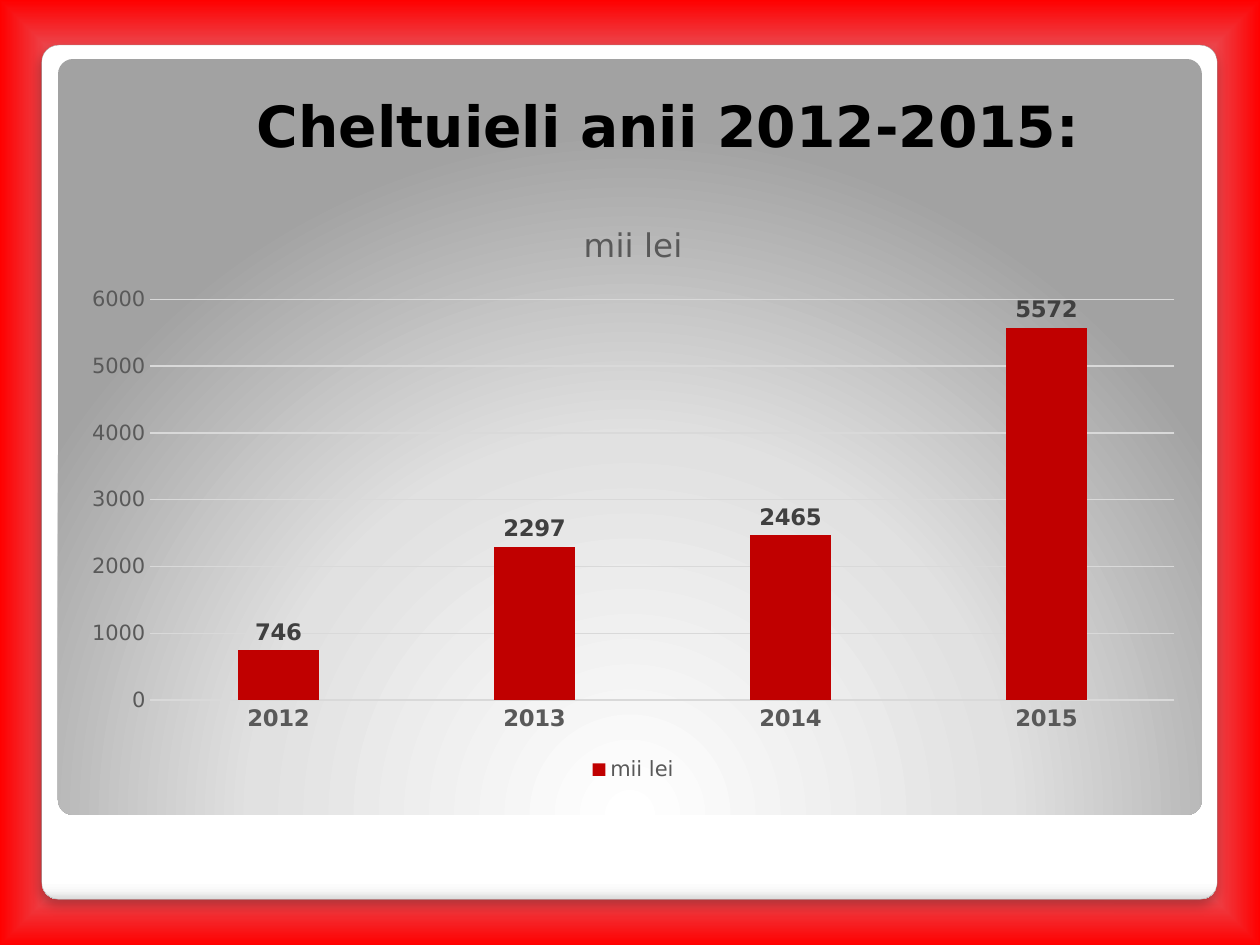
from lxml import etree
from pptx import Presentation
from pptx.chart.data import CategoryChartData
from pptx.dml.color import RGBColor
from pptx.enum.chart import XL_CHART_TYPE as ChartType
from pptx.enum.chart import XL_LABEL_POSITION as LabelPosition
from pptx.enum.chart import XL_LEGEND_POSITION as LegendPosition
from pptx.enum.chart import XL_TICK_MARK as TickMark
from pptx.enum.shapes import MSO_SHAPE as Shape
from pptx.enum.text import MSO_ANCHOR as Anchor
from pptx.enum.text import MSO_AUTO_SIZE as AutoSize
from pptx.enum.text import PP_ALIGN as Align
from pptx.oxml import parse_xml
from pptx.oxml.ns import nsdecls, qn
from pptx.util import Cm, Pt

FONT = "DejaVu Sans"
DARK_GREY = "595959"
LIGHT_GREY = "D9D9D9"
RED = "C00000"


def rgb(value):
    return RGBColor.from_string(value)


def set_font(font, size, color, bold=False):
    font.name = FONT
    font.size = Pt(size)
    font.bold = bold
    font.color.rgb = rgb(color)


def set_line(line, color, width):
    line.color.rgb = rgb(color)
    line.width = Pt(width)


def set_gradient(parent, stops, direction):
    """Replace the solid fill inside parent; direction is a:lin or a:path XML."""
    stop_xml = "".join(
        f'<a:gs pos="{percent * 1000}"><a:srgbClr val="{color}"/></a:gs>'
        for percent, color in stops
    )
    gradient = parse_xml(
        f'<a:gradFill {nsdecls("a")} rotWithShape="1">'
        f"<a:gsLst>{stop_xml}</a:gsLst>{direction}</a:gradFill>"
    )
    parent.replace(parent.find(qn("a:solidFill")), gradient)


def path_direction(kind, top, bottom):
    return (
        f'<a:path path="{kind}"><a:fillToRect l="50000" t="{top * 1000}" '
        f'r="50000" b="{bottom * 1000}"/></a:path>'
    )


def add_background(slide):
    slide.background.fill.solid()
    properties = slide.element.find(".//" + qn("p:bgPr"))
    stops = [(40, "85C2FF"), (70, "C4D6EB"), (100, "FF0000")]
    set_gradient(properties, stops, path_direction("shape", 50, 50))


def add_panel(slide, left, top, width, height, stops, direction):
    panel = slide.shapes.add_shape(
        Shape.ROUNDED_RECTANGLE, Cm(left), Cm(top), Cm(width), Cm(height)
    )
    panel.adjustments[0] = 0.02
    panel.shadow.inherit = False
    panel.line.fill.background()
    panel.fill.solid()
    set_gradient(panel.element.spPr, stops, direction)
    return panel


def add_soft_shadow(shape):
    effects = shape.element.spPr.find(qn("a:effectLst"))
    shadow = etree.SubElement(
        effects, qn("a:outerShdw"), blurRad=str(Pt(6)), dist=str(Pt(4)), dir="5400000"
    )
    color = etree.SubElement(shadow, qn("a:srgbClr"), val="000000")
    etree.SubElement(color, qn("a:alpha"), val="25000")


def add_panels(slide):
    white_stops = [(0, "FFFFFF"), (98, "FFFFFF"), (99, "F7F7F7"), (100, "DADADA")]
    frame = add_panel(
        slide, 0.84, 0.91, 23.7, 17.22, white_stops, '<a:lin ang="5400000" scaled="0"/>'
    )
    set_line(frame.line, "A4A4A4", 0.16)
    add_soft_shadow(frame)
    grey_stops = [(0, "FFFFFF"), (55, "E1E1E1"), (100, "A2A2A2")]
    add_panel(
        slide, 1.17, 1.19, 23.06, 15.24, grey_stops, path_direction("circle", 175, -75)
    )


def place_title(slide, text):
    title = slide.shapes.title
    title.left, title.top, title.width, title.height = Cm(2.11), Cm(1.7), Cm(22.73), Cm(2.92)
    slide.shapes[-1].element.addnext(title.element)  # in front of the panels
    frame = title.text_frame
    frame.auto_size = AutoSize.NONE
    frame.word_wrap = True
    frame.vertical_anchor = Anchor.TOP
    para = frame.paragraphs[0]
    para.alignment = Align.CENTER
    span = para.add_run()
    span.text = text
    set_font(span.font, 32.4, "000000", bold=True)


def style_axes(chart):
    category_axis, value_axis = chart.category_axis, chart.value_axis
    for axis in (category_axis, value_axis):
        axis.major_tick_mark = axis.minor_tick_mark = TickMark.NONE
    set_font(category_axis.tick_labels.font, 13, DARK_GREY, bold=True)
    set_line(category_axis.format.line, LIGHT_GREY, 0.75)
    set_font(value_axis.tick_labels.font, 12, DARK_GREY)
    value_axis.format.line.fill.background()
    value_axis.has_major_gridlines = True
    set_line(value_axis.major_gridlines.format.line, LIGHT_GREY, 0.75)


def style_columns(plot):
    plot.gap_width = 219
    plot.overlap = -27
    plot.vary_by_categories = False
    series = plot.series[0]
    series.format.fill.solid()
    series.format.fill.fore_color.rgb = rgb(RED)
    labels = series.data_labels
    labels.show_value = True
    labels.position = LabelPosition.OUTSIDE_END
    set_font(labels.font, 13, "404040", bold=True)


def add_expense_chart(slide, unit, expenses):
    data = CategoryChartData()
    data.categories = list(expenses)
    data.add_series(unit, list(expenses.values()))
    chart = slide.shapes.add_chart(
        ChartType.COLUMN_CLUSTERED, Cm(1.4), Cm(4.01), Cm(22.73), Cm(11.86), data
    ).chart
    set_font(chart.font, 10, "000000")
    chart.has_title = True
    span = chart.chart_title.text_frame.paragraphs[0].add_run()
    span.text = unit
    set_font(span.font, 18.6, DARK_GREY)
    chart.has_legend = True
    chart.legend.position = LegendPosition.BOTTOM
    chart.legend.include_in_layout = False
    set_font(chart.legend.font, 12, DARK_GREY)
    style_axes(chart)
    style_columns(chart.plots[0])


def main():
    deck = Presentation()
    deck.slide_width, deck.slide_height = Cm(25.4), Cm(19.05)
    slide = deck.slides.add_slide(deck.slide_layouts.get_by_name("Title Only"))
    add_background(slide)
    add_panels(slide)
    place_title(slide, "Cheltuieli anii 2012-2015:")
    expenses = {"2012": 746, "2013": 2297, "2014": 2465, "2015": 5572}
    add_expense_chart(slide, "mii lei", expenses)
    deck.save("out.pptx")


if __name__ == "__main__":
    main()
